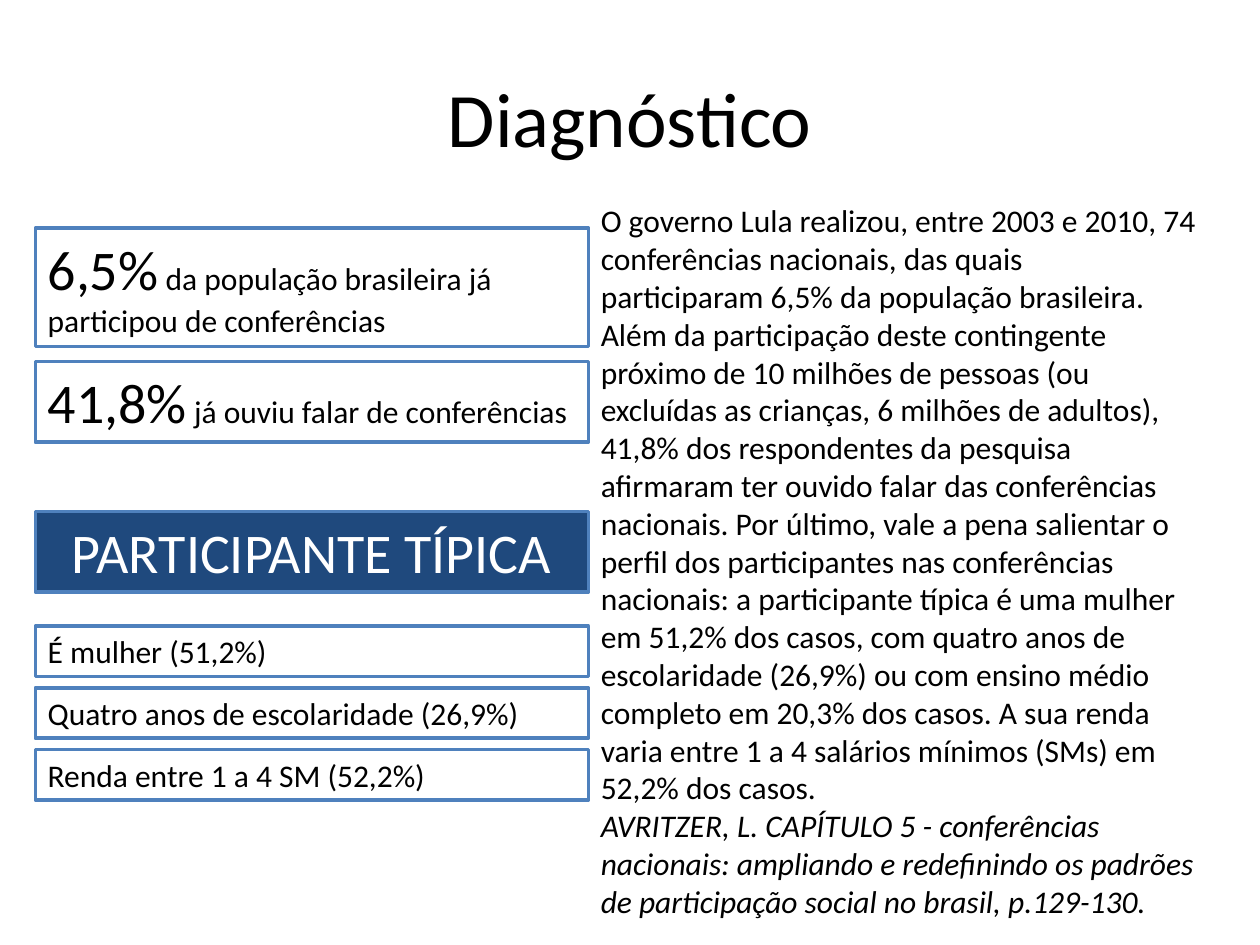
import pptx
import pptx.util
import pptx.dml.color
import pptx.enum.shapes
import pptx.enum.text

Inches = pptx.util.Inches
Align = pptx.enum.text.PP_ALIGN
Anchor = pptx.enum.text.MSO_ANCHOR

COLORS = {"text": "000000", "paper": "FFFFFF", "navy": "1F497D", "border": "4F81BD"}
BODY, FIGURE, HEADING = 18, 32, 44


class SlideBuilder:
    font_name = "Calibri"

    def __init__(self, slide):
        self.slide = slide

    def color(self, key):
        return pptx.dml.color.RGBColor.from_string(COLORS[key])

    def run(self, paragraph, text, size=BODY, color="text", italic=None):
        run = paragraph.add_run()
        run.text = text
        run.font.name = self.font_name
        run.font.size = pptx.util.Pt(size)
        run.font.color.rgb = self.color(color)
        run.font.italic = italic

    def title(self, text, left, top, width, height):
        title = self.slide.shapes.title
        title.left, title.top = Inches(left), Inches(top)
        title.width, title.height = Inches(width), Inches(height)
        title.text_frame.vertical_anchor = Anchor.MIDDLE
        paragraph = title.text_frame.paragraphs[0]
        paragraph.alignment = Align.CENTER
        self.run(paragraph, text, HEADING)

    def passage(self, paragraphs, citation, left, top, width, height):
        box = self.slide.shapes.add_textbox(
            Inches(left), Inches(top), Inches(width), Inches(height))
        frame = box.text_frame
        frame.word_wrap = True
        frame.auto_size = pptx.enum.text.MSO_AUTO_SIZE.SHAPE_TO_FIT_TEXT
        self.run(frame.paragraphs[0], paragraphs[0])
        for text in paragraphs[1:]:
            self.run(frame.add_paragraph(), text)
        self.run(frame.add_paragraph(), citation, italic=True)

    def panel(self, runs, left, top, width, height,
              fill="paper", color="text", align=Align.LEFT):
        panel = self.slide.shapes.add_shape(
            pptx.enum.shapes.MSO_SHAPE.RECTANGLE,
            Inches(left), Inches(top), Inches(width), Inches(height))
        panel.shadow.inherit = False
        panel.fill.solid()
        panel.fill.fore_color.rgb = self.color(fill)
        panel.line.color.rgb = self.color("border")
        panel.line.width = pptx.util.Pt(2)
        frame = panel.text_frame
        frame.word_wrap = True
        frame.auto_size = pptx.enum.text.MSO_AUTO_SIZE.SHAPE_TO_FIT_TEXT
        frame.vertical_anchor = Anchor.TOP
        paragraph = frame.paragraphs[0]
        paragraph.alignment = align
        for text, size in runs:
            self.run(paragraph, text, size, color)


def main():
    deck = pptx.Presentation()
    deck.slide_width, deck.slide_height = Inches(10), Inches(7.5)
    title_only = deck.slide_layouts[5]
    builder = SlideBuilder(deck.slides.add_slide(title_only))

    builder.title("Diagnóstico", 0.5, 0.3, 9, 1.25)

    # Source passage, right column
    column_left, column_width = 0.28, 4.39
    builder.passage(
        [
            "O governo Lula realizou, entre 2003 e 2010, 74 conferências nacionais, das quais",
            "participaram 6,5% da população brasileira. Além da participação deste contingente",
            "próximo de 10 milhões de pessoas (ou excluídas as crianças, 6 milhões de adultos),",
            "41,8% dos respondentes da pesquisa afirmaram ter ouvido falar das conferências",
            "nacionais. Por último, vale a pena salientar o perfil dos participantes nas "
            "conferências nacionais: a participante típica é uma mulher em 51,2% dos casos, "
            "com quatro anos de escolaridade (26,9%) ou com ensino médio completo em 20,3% "
            "dos casos. A sua renda varia entre 1 a 4 salários mínimos (SMs) em 52,2% dos casos.",
        ],
        "AVRITZER, L. CAPÍTULO 5 - conferências nacionais: ampliando e redefinindo "
        "os padrões de participação social no brasil, p.129-130.",
        column_left + column_width, 1.55, 5, 5.86)

    # Key figures, left column
    key_figures = [
        ("6,5%", " da população brasileira já participou de conferências", 1.81, 0.94),
        ("41,8%", " já ouviu falar de conferências", 2.87, 0.64),
    ]
    for figure, meaning, top, height in key_figures:
        builder.panel([(figure, FIGURE), (meaning, BODY)],
                      column_left, top, column_width, height)

    # Typical participant: banner and traits
    builder.panel([("PARTICIPANTE TÍPICA", FIGURE)], column_left, 4.06, column_width, 0.64,
                  fill="navy", color="paper", align=Align.CENTER)
    traits = [
        "É mulher (51,2%)",
        "Quatro anos de escolaridade (26,9%)",
        "Renda entre 1 a 4 SM (52,2%)",
    ]
    traits_top, trait_pitch = 4.97, 0.49
    for index, trait in enumerate(traits):
        builder.panel([(trait, BODY)], column_left, traits_top + index * trait_pitch,
                      column_width, 0.4)

    deck.save("out.pptx")


if __name__ == "__main__":
    main()
